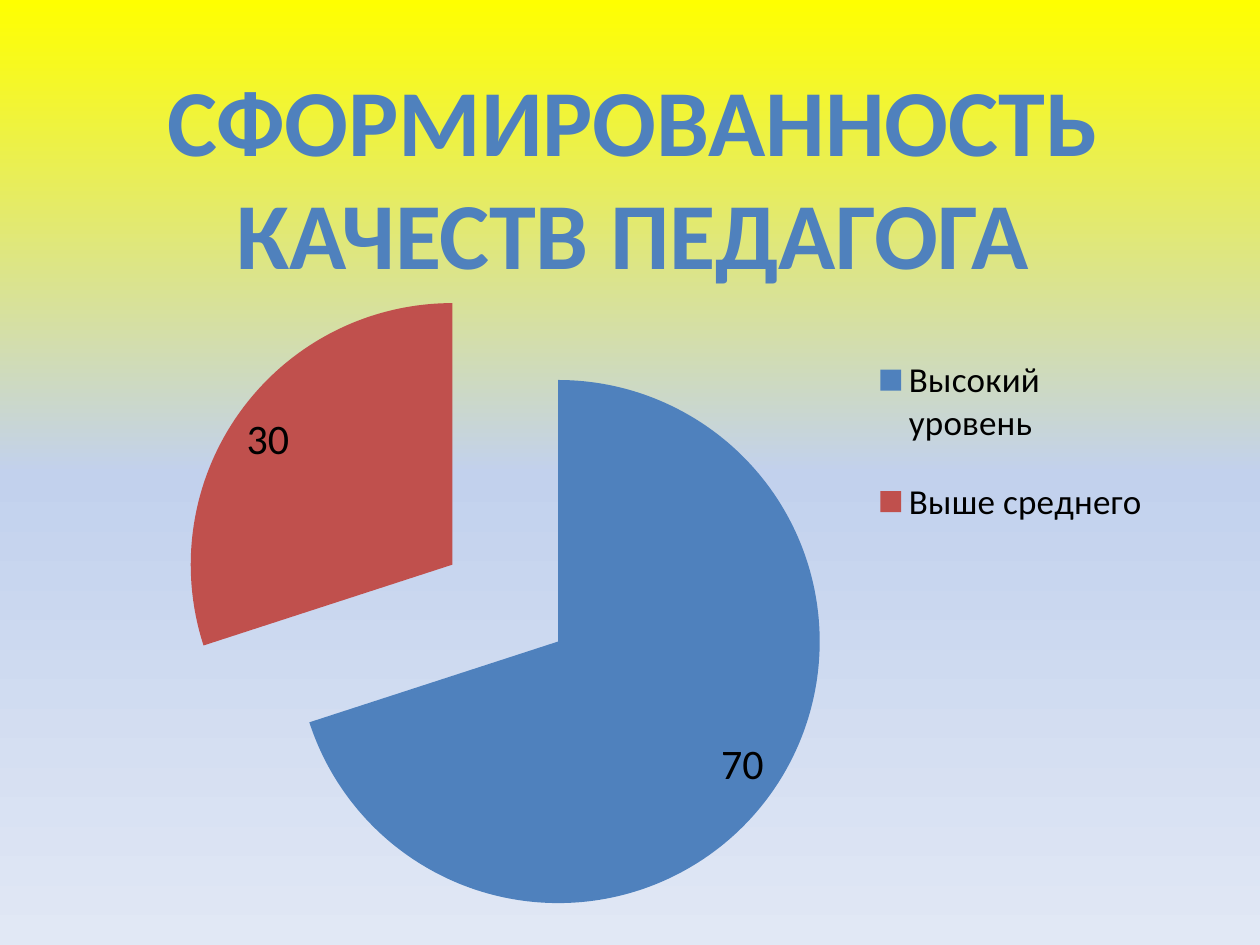
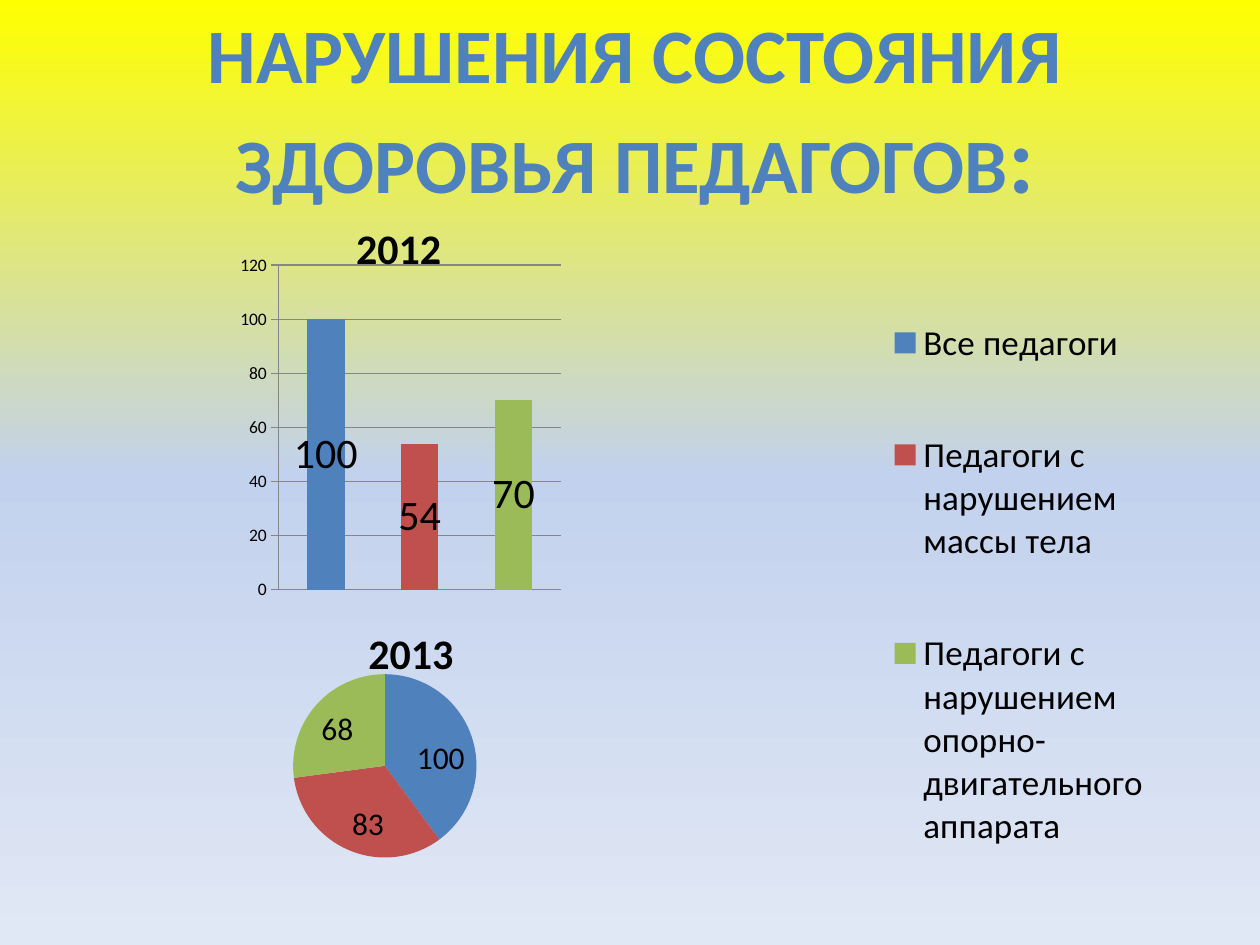
"""Build two slides about the qualities and the health of teachers."""
from copy import deepcopy
from dataclasses import dataclass
from typing import Optional

from pptx import Presentation, util as u
from pptx.chart.chart import Chart
from pptx.chart.data import CategoryChartData
from pptx.dml.color import RGBColor
from pptx.enum import chart as kinds, text
from pptx.oxml import parse_xml
from pptx.oxml.ns import nsdecls
from pptx.slide import Slide

FONT = "Calibri"
BLACK, GREY, BLUE = "000000", "868686", "4F81BD"
PALETTE = (BLUE, "C0504D", "9BBB59")
BACKDROP = ((0, "FFFF00"), (0.5, "C2D1ED"), (1, "E1E8F5"))
PIE, COLUMN = kinds.XL_CHART_TYPE.PIE, kinds.XL_CHART_TYPE.COLUMN_STACKED
INSIDE, MIDDLE = kinds.XL_LABEL_POSITION.INSIDE_END, kinds.XL_LABEL_POSITION.CENTER


@dataclass
class Box:
    """A place on the slide in centimetres."""
    left: float
    top: float
    width: float
    height: float

    def lengths(self) -> tuple:
        """Return the four sides as lengths."""
        return tuple(u.Cm(side) for side in (self.left, self.top, self.width, self.height))


@dataclass
class Span:
    """A piece of text with its size in points."""
    words: str
    size: int


@dataclass
class ChartPlan:
    """The data and look of one chart; areas are fractions of its frame."""
    kind: int
    box: Box
    categories: tuple
    values: tuple
    label_size: int
    label_place: int
    base_size: int = 10
    plot_area: Optional[tuple] = None
    legend_area: Optional[tuple] = None
    title: str = ""
    title_place: tuple = ()
    explosion: int = 0


QUALITIES = ChartPlan(
    PIE, Box(2.77, 5.13, 20.6, 13.92), ("Высокий уровень", "Выше среднего"), (70, 30),
    24, INSIDE, legend_area=(0.72, 0.1, 0.27, 0.34), plot_area=(0.04, 0.03, 0.64, 0.95),
    explosion=25)
HEALTH_2012 = ChartPlan(
    COLUMN, Box(4.37, 4.95, 19.25, 14.1),
    ("Все педагоги", "Педагоги с нарушением массы тела",
     "Педагоги с нарушением опорно-двигательного аппарата"), (100, 54, 70),
    24, MIDDLE, plot_area=(0.065, 0.028, 0.295, 0.464), legend_area=(0.7, 0.01, 0.28, 0.95))
HEALTH_2013 = ChartPlan(
    PIE, Box(3.38, 11.3, 9.73, 7.14), ("1", "2", "3"), (100, 83, 68),
    18, INSIDE, base_size=18, plot_area=(0.26, 0.32, 0.38, 0.52),
    title="2013", title_place=(0.4, 0.16))


def colour(code: str) -> RGBColor:
    """Turn a hex string into a colour."""
    return RGBColor.from_string(code)


def style(font, size: int, code: str = BLACK, bold: bool = False) -> None:
    """Set the face, size, colour and weight of a font."""
    font.name, font.size, font.bold = FONT, u.Pt(size), bold
    font.color.rgb = colour(code)


def paint_backdrop(master) -> None:
    """Give the slide master its vertical gradient."""
    fill = master.background.fill
    fill.gradient()
    fill.gradient_angle = 270
    last = master.element.xpath("p:cSld/p:bg//a:gs")[-1]
    last.addnext(deepcopy(last))
    for stop, (position, code) in zip(fill.gradient_stops, BACKDROP):
        stop.position = position
        stop.color.rgb = colour(code)


def add_titled_slide(deck, box: Box, lines: tuple, wrap: bool = True) -> Slide:
    """Add a slide whose title has one paragraph for each line."""
    page = deck.slides.add_slide(deck.slide_layouts[5])
    title = page.shapes.title
    title.left, title.top, title.width, title.height = box.lengths()
    frame = title.text_frame
    frame.word_wrap, frame.auto_size = wrap, text.MSO_AUTO_SIZE.NONE
    frame.vertical_anchor = text.MSO_ANCHOR.TOP
    frame.text = "\n".join("" for _ in lines)
    for para, spans in zip(frame.paragraphs, lines):
        para.alignment = text.PP_ALIGN.CENTER
        for span in spans:
            run = para.add_run()
            run.text = span.words
            style(run.font, span.size, BLUE, True)
    return page


def place(part, index: int, area: tuple, inner: bool = False) -> None:
    """Fix the layout of a chart part by fractions of the chart."""
    for old in part.xpath("c:layout"):
        part.remove(old)
    names = ("x", "y", "w", "h")[:len(area)]
    target = '<c:layoutTarget val="inner"/>' if inner else ""
    modes = "".join(f'<c:{name}Mode val="edge"/>' for name in names[:2])
    sizes = "".join(f'<c:{name} val="{value}"/>' for name, value in zip(names, area))
    part.insert(index, parse_xml(
        f'<c:layout {nsdecls("c")}><c:manualLayout>{target}{modes}{sizes}'
        '</c:manualLayout></c:layout>'))


def style_axes(chart: Chart) -> None:
    """Hide the category axis and draw grey value lines."""
    chart.category_axis.visible = False
    axis = chart.value_axis
    axis.minimum_scale, axis.maximum_scale, axis.major_unit = 0, 120, 20
    axis.major_tick_mark = kinds.XL_TICK_MARK.CROSS
    axis.has_major_gridlines = True
    for line in (axis.format.line, axis.major_gridlines.format.line):
        line.color.rgb = colour(GREY)
        line.width = u.Pt(0.75)


def add_chart(page: Slide, plan: ChartPlan) -> None:
    """Draw a chart from its plan."""
    data = CategoryChartData()
    data.categories = plan.categories
    data.add_series("Series 1", plan.values)
    chart = page.shapes.add_chart(plan.kind, *plan.box.lengths(), data).chart
    style(chart.font, plan.base_size)
    plot = chart.plots[0]
    plot.vary_by_categories = True
    series = plot.series[0]
    if plan.explosion:
        chart.element.xpath(".//c:ser/c:tx")[0].addnext(
            parse_xml(f'<c:explosion {nsdecls("c")} val="{plan.explosion}"/>'))
    for index, code in enumerate(PALETTE[:len(plan.values)]):
        fill = series.points[index].format.fill
        fill.solid()
        fill.fore_color.rgb = colour(code)
    labels = series.data_labels
    labels.show_value, labels.position = True, plan.label_place
    style(labels.font, plan.label_size)
    if plan.kind == COLUMN:
        plot.gap_width, plot.overlap = 150, 100
        style_axes(chart)
    chart.has_title = bool(plan.title)
    if plan.title:
        frame = chart.chart_title.text_frame
        frame.text = plan.title
        style(frame.paragraphs[0].runs[0].font, 24, bold=True)
        place(chart.element.xpath("c:chart/c:title")[0], 1, plan.title_place)
    chart.has_legend = plan.legend_area is not None
    if plan.legend_area:
        chart.legend.position = kinds.XL_LEGEND_POSITION.RIGHT
        chart.legend.include_in_layout = False
        style(chart.legend.font, 20)
        place(chart.element.xpath("c:chart/c:legend")[0], 1, plan.legend_area)
    if plan.plot_area:
        place(chart.element.xpath("c:chart/c:plotArea")[0], 0, plan.plot_area, True)


def add_year(page: Slide, box: Box, year: str) -> None:
    """Write a bold year above a chart."""
    frame = page.shapes.add_textbox(*box.lengths()).text_frame
    frame.word_wrap = True
    frame.text = year
    style(frame.paragraphs[0].runs[0].font, 24, bold=True)


def main() -> None:
    """Build and save the deck."""
    deck = Presentation()
    deck.slide_width, deck.slide_height = u.Cm(25.4), u.Cm(19.05)
    paint_backdrop(deck.slide_master)

    page = add_titled_slide(
        deck, Box(3.02, 1.12, 19.48, 4.88),
        ((Span("СФОРМИРОВАННОСТЬ", 54),), (Span("КАЧЕСТВ ПЕДАГОГА", 54),)), wrap=False)
    add_chart(page, QUALITIES)

    page = add_titled_slide(
        deck, Box(1.4, 0, 22.81, 4.45),
        ((Span("НАРУШЕНИЯ СОСТОЯНИЯ", 44),),
         (Span("ЗДОРОВЬЯ ПЕДАГОГОВ", 44), Span(":", 54))))
    add_chart(page, HEALTH_2012)
    add_chart(page, HEALTH_2013)
    add_year(page, Box(6.93, 4.37, 2.39, 1.27), "2012")
    deck.save("out.pptx")


if __name__ == "__main__":
    main()
